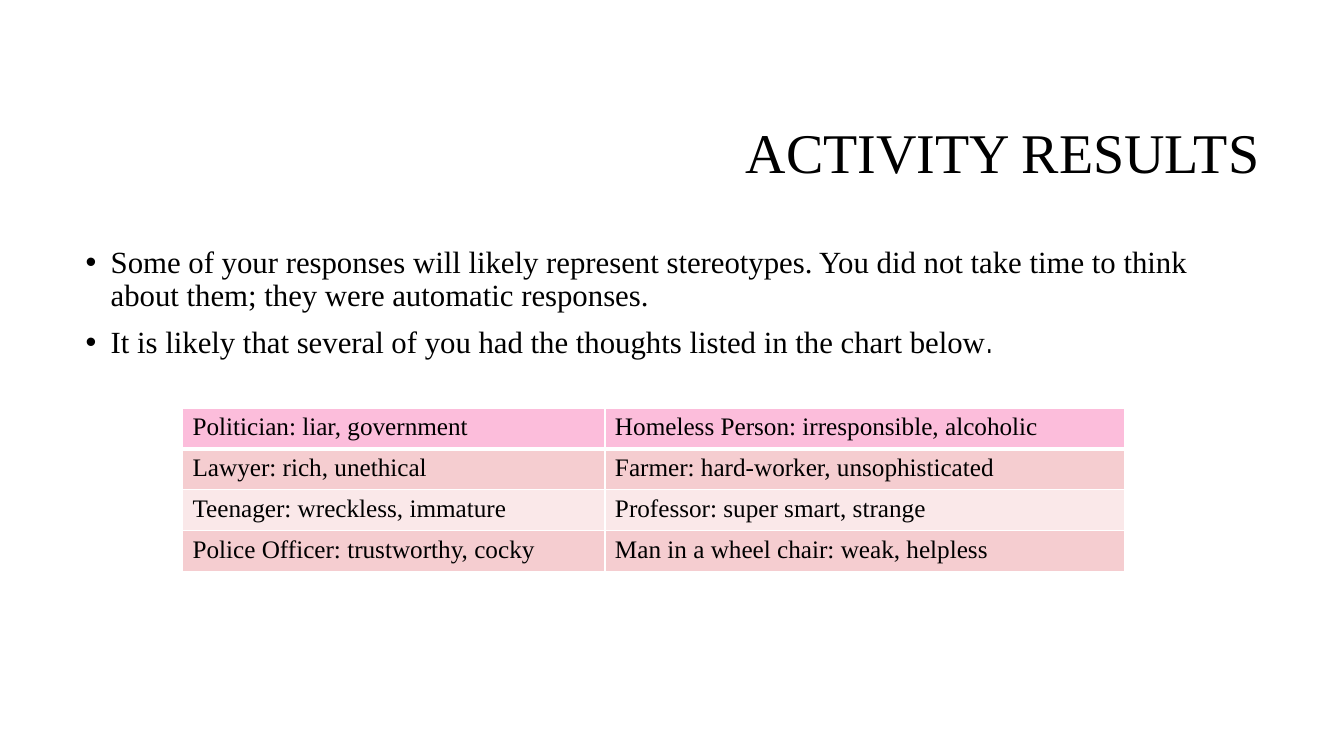
from dataclasses import dataclass
from lxml.etree import SubElement
from pptx import Presentation
from pptx.dml.color import RGBColor as Color
from pptx.enum.text import MSO_ANCHOR as Anchor, PP_ALIGN as Align
from pptx.oxml.ns import qn
from pptx.util import Inches, Pt

TITLE = "ACTIVITY RESULTS"
POINTS = [
    ["Some of your responses will likely represent stereotypes. You did not take time to think "
     "about them; they were automatic responses."],
    ["It is likely that several of you had the thoughts listed in the chart below", "."],
]
ROWS = [
    ("Politician: liar, government", "Homeless Person: irresponsible, alcoholic"),
    ("Lawyer: rich, unethical", "Farmer: hard-worker, unsophisticated"),
    ("Teenager: wreckless, immature", "Professor: super smart, strange"),
    ("Police Officer: trustworthy, cocky", "Man in a wheel chair: weak, helpless"),
]
WIDTHS = (4.19, 5.15)
HEIGHT = 0.405


@dataclass(frozen=True)
class Theme:
    """Colours, fonts and type sizes."""
    ink: str = "000000"
    rule: str = "FFFFFF"
    head: str = "FCBDDB"
    bands: tuple = ("F5CDD0", "FAE8E9")
    font: str = "Times New Roman"
    stop: str = "TeX Gyre Adventor"
    title: int = 40
    body: int = 22
    cell: int = 18


LOOK = Theme()


def style(run, size, face=LOOK.font):
    """Set the font of a run."""
    run.font.name = face
    run.font.size = Pt(size)
    run.font.color.rgb = Color.from_string(LOOK.ink)


def bullet(para):
    """Give a paragraph a hanging bullet."""
    props = para._p.get_or_add_pPr()
    props.set("marL", str(Inches(0.25)))
    props.set("indent", str(-Inches(0.25)))
    SubElement(props, qn("a:buFont"), typeface="Arial")
    SubElement(props, qn("a:buChar"), char="•")


def border(cell, side, width):
    """Draw one edge of a cell."""
    line = SubElement(cell._tc.get_or_add_tcPr(), qn("a:" + side), w=str(Pt(width)))
    fill = SubElement(line, qn("a:solidFill"))
    SubElement(fill, qn("a:srgbClr"), val=LOOK.rule)


def add_title(slide):
    """Place the title."""
    title = slide.shapes.title
    title.left, title.top, title.width, title.height = map(Inches, (3.17, 0.84, 9.42, 1.41))
    frame = title.text_frame
    frame.text = TITLE
    frame.vertical_anchor = Anchor.MIDDLE
    para = frame.paragraphs[0]
    para.alignment = Align.RIGHT
    para.line_spacing = 0.9
    style(para.runs[0], LOOK.title)


def add_points(slide):
    """Place the bulleted points."""
    frame = slide.shapes.add_textbox(*map(Inches, (0.75, 2.4, 11.83, 4.4))).text_frame
    frame.word_wrap = True
    for row, parts in enumerate(POINTS):
        para = frame.add_paragraph() if row else frame.paragraphs[0]
        para.line_spacing = 0.9
        para.space_before = Pt(10 if row else 0)
        bullet(para)
        for text, face in zip(parts, (LOOK.font, LOOK.stop)):
            run = para.add_run()
            run.text = text
            style(run, LOOK.body, face)


def add_grid(slide):
    """Place the table of responses."""
    size = map(Inches, (1.81, 4.05, sum(WIDTHS), HEIGHT * len(ROWS)))
    grid = slide.shapes.add_table(len(ROWS), len(WIDTHS), *size).table
    for col, width in zip(grid.columns, WIDTHS):
        col.width = Inches(width)
    for row, texts in enumerate(ROWS):
        grid.rows[row].height = Inches(HEIGHT)
        tint = LOOK.bands[(row - 1) % 2] if row else LOOK.head
        for col, text in enumerate(texts):
            cell = grid.cell(row, col)
            cell.text = text
            style(cell.text_frame.paragraphs[0].runs[0], LOOK.cell)
            for side in ("lnL", "lnR", "lnT", "lnB"):
                thick = (row, side) in ((0, "lnB"), (1, "lnT"))
                border(cell, side, 3 if thick else 1)
            cell.fill.solid()
            cell.fill.fore_color.rgb = Color.from_string(tint)


def main():
    """Build and save the slide."""
    deck = Presentation()
    deck.slide_width, deck.slide_height = Inches(13.33), Inches(7.5)
    slide = deck.slides.add_slide(deck.slide_layouts[5])
    add_title(slide)
    add_points(slide)
    add_grid(slide)
    deck.save("out.pptx")


if __name__ == "__main__":
    main()
